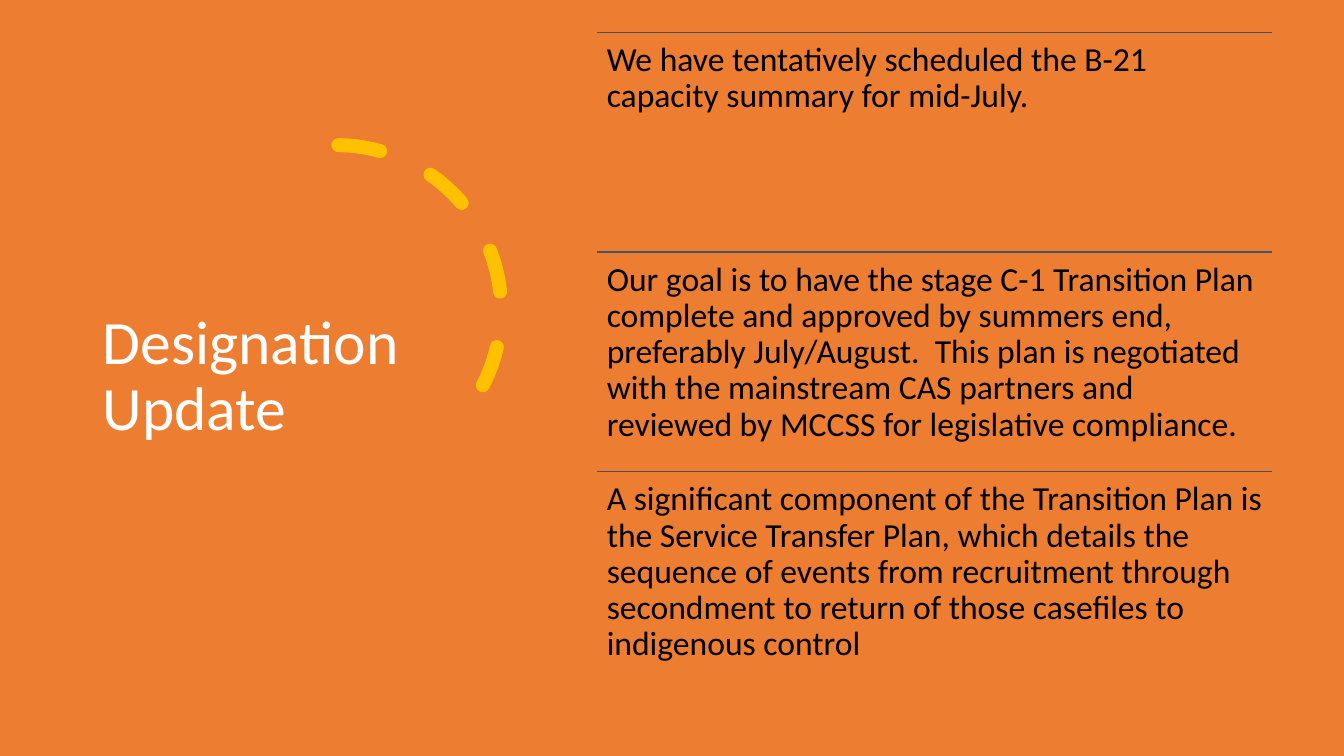
from pptx import Presentation
from pptx.dml.color import RGBColor
from pptx.enum.dml import MSO_LINE
from pptx.enum.shapes import MSO_CONNECTOR, MSO_SHAPE
from pptx.enum.text import MSO_ANCHOR
from pptx.oxml.ns import qn
from pptx.oxml.xmlchemy import OxmlElement
from pptx.util import Pt

PX = 9144  # EMU per px, 100 px to the inch
COLORS = {
    "orange": "ED7D31",
    "gold": "FFC000",
    "slate": "44546A",
    "white": "FFFFFF",
    "black": "000000",
}


def color(name):
    return RGBColor.from_string(COLORS[name])


def add_text(page, area, words, size, tint, frame_format, para_format):
    box = page.shapes.add_textbox(*(n * PX for n in area))
    frame = box.text_frame
    for name, value in {"word_wrap": True, **frame_format}.items():
        setattr(frame, name, value)
    para = frame.paragraphs[0]
    for name, value in {"line_spacing": 0.9, **para_format}.items():
        setattr(para, name, value)
    span = para.add_run()
    span.text = words
    for name, value in {"name": "Calibri", "size": Pt(size)}.items():
        setattr(span.font, name, value)
    span.font.color.rgb = color(tint)


deck = Presentation()
deck.slide_width, deck.slide_height = 1333 * PX, 750 * PX
page = deck.slides.add_slide(deck.slide_layouts[6])

# Orange backdrop
backdrop = page.shapes.add_shape(MSO_SHAPE.RECTANGLE, 0, 0, deck.slide_width, deck.slide_height)
backdrop.shadow.inherit = False
backdrop.fill.solid()
backdrop.fill.fore_color.rgb = color("orange")
backdrop.line.fill.background()

# Dashed arc with round caps
arc = page.shapes.add_shape(MSO_SHAPE.ARC, 170 * PX, 144 * PX, 327 * PX, 327 * PX)
arc.shadow.inherit = False
arc.rotation = 27.2
arc.adjustments[0] = 146.13
arc.adjustments[1] = 0
arc.fill.background()
arc.line.color.rgb = color("gold")
arc.line.width = Pt(10)
arc.line.dash_style = MSO_LINE.DASH
arc.element.spPr.find(qn("a:ln")).set("cap", "rnd")

# Title
add_text(page, (92, 70, 323, 609), "Designation Update", 44, "white",
         {"vertical_anchor": MSO_ANCHOR.MIDDLE}, {})

# Updates, each under a rule
updates = [
    "We have tentatively scheduled the B-21 capacity summary for mid-July.",
    "Our goal is to have the stage C-1 Transition Plan complete and approved by "
    "summers end, preferably July/August.  This plan is negotiated with the "
    "mainstream CAS partners and reviewed by MCCSS for legislative compliance.",
    "A significant component of the Transition Plan is the Service Transfer Plan, "
    "which details the sequence of events from recruitment through secondment to "
    "return of those casefiles to indigenous control",
]
left, first_top, width, height = 592, 32, 670, 218
margins = {f"margin_{side}": 10 * PX for side in ("left", "top", "right", "bottom")}
for index, words in enumerate(updates):
    top = first_top + index * height
    rule = page.shapes.add_connector(
        MSO_CONNECTOR.STRAIGHT, left * PX, top * PX, (left + width) * PX, top * PX)
    rule.line.color.rgb = color("slate")
    rule.line.width = Pt(1)
    rule.element.spPr.append(OxmlElement("a:effectLst"))
    add_text(page, (left, top, width, height), words, 24, "black",
             margins, {"space_after": Pt(8)})

deck.save("out.pptx")
